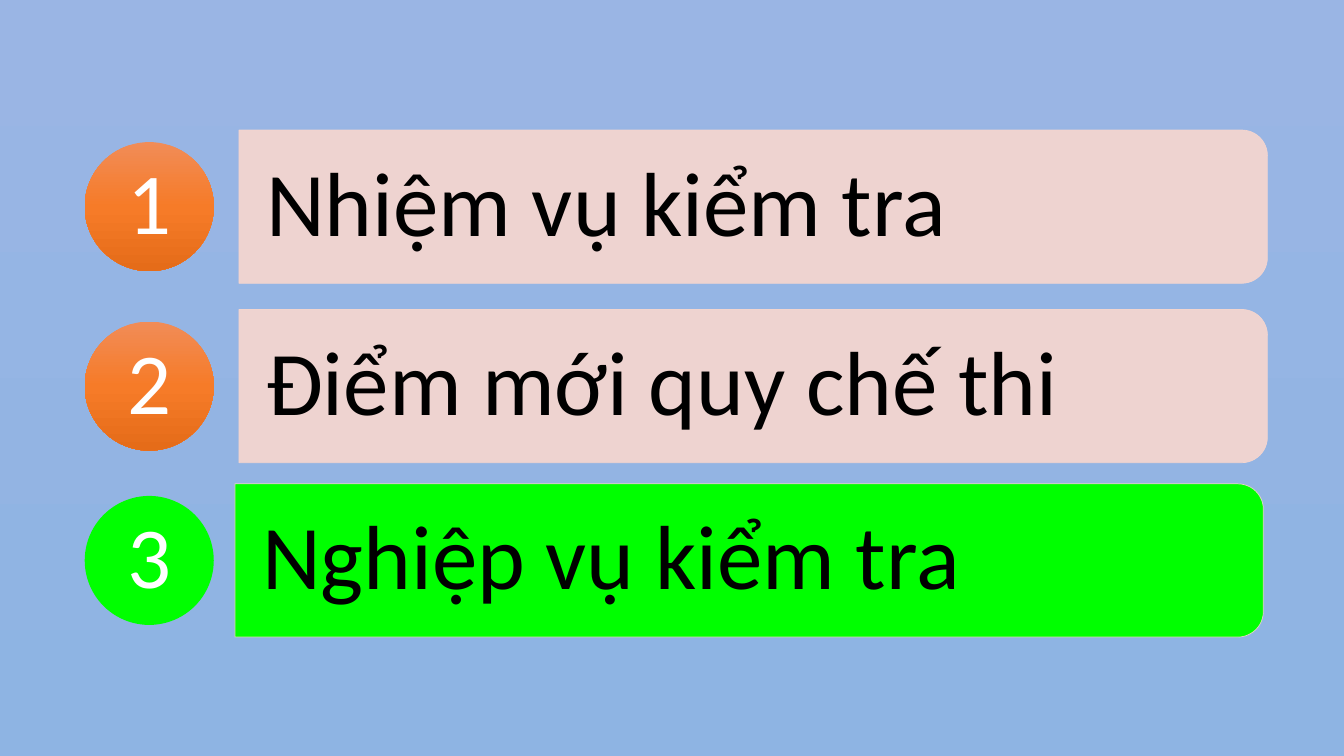
from copy import deepcopy

from lxml.etree import SubElement
from pptx import Presentation
from pptx.dml.color import RGBColor
from pptx.enum.shapes import MSO_SHAPE
from pptx.enum.text import MSO_ANCHOR, PP_ALIGN
from pptx.oxml.ns import qn
from pptx.util import Inches, Pt

THEME = {
    "font": "Calibri",
    "label_size": Pt(65),
    "number_size": Pt(62),
    "label_color": RGBColor.from_string("000000"),
    "number_color": RGBColor.from_string("FFFFFF"),
    "bar": RGBColor.from_string("F8D7CE"),
    "active": RGBColor.from_string("00FF00"),
    "background": ["9AB5E4", "8EB4E3"],
    "circle": ["F18C57", "F67B28", "E56C19"],
}

# Columns and row parts, in inches
CIRCLE_LEFT, CIRCLE_SIZE = 0.84, 1.28
BAR_WIDTH, BAR_HEIGHT = 10.2, 1.52
LABEL_WIDTH, LABEL_HEIGHT = 10.12, 1.37

# Label, bar left, bar top, whether the row is the current topic
ROWS = [
    ("Nhiệm vụ kiểm tra", 2.37, 1.29, False),
    ("Điểm mới quy chế thi", 2.37, 3.07, False),
    ("Nghiệp vụ kiểm tra", 2.33, 4.8, True),
]


def fill_downward(fill, colors):
    """Colour the existing gradient stops evenly from top to bottom."""
    fill.gradient_angle = 270
    for index, (stop, color) in enumerate(zip(fill.gradient_stops, colors)):
        stop.position = index / (len(colors) - 1)
        stop.color.rgb = RGBColor.from_string(color)


def write_text(shape, text, size, color, alignment, margins):
    """Write one centred line; margins are horizontal and vertical inches."""
    frame = shape.text_frame
    frame.text = text
    frame.word_wrap = True
    frame.vertical_anchor = MSO_ANCHOR.MIDDLE
    frame.margin_left = frame.margin_right = Inches(margins[0])
    frame.margin_top = frame.margin_bottom = Inches(margins[1])
    paragraph = frame.paragraphs[0]
    paragraph.alignment = alignment
    paragraph.line_spacing = 0.9
    font = paragraph.runs[0].font
    font.name, font.size = THEME["font"], size
    font.color.rgb = color


presentation = Presentation()
presentation.slide_width = Inches(13.33)
presentation.slide_height = Inches(7.5)
slide = presentation.slides.add_slide(presentation.slide_layouts[6])
slide.background.fill.gradient()
fill_downward(slide.background.fill, THEME["background"])

for number, (label, left, top, is_active) in enumerate(ROWS, start=1):
    # The bar stands upright and is turned so its round corners face right
    turn = (BAR_WIDTH - BAR_HEIGHT) / 2
    bar = slide.shapes.add_shape(
        MSO_SHAPE.ROUND_2_SAME_RECTANGLE,
        Inches(left + turn), Inches(top - turn),
        Inches(BAR_HEIGHT), Inches(BAR_WIDTH))
    bar.rotation = 90
    bar.shadow.inherit = False
    bar.fill.solid()
    bar.fill.fore_color.rgb = THEME["active"] if is_active else THEME["bar"]
    bar.line.color.rgb = THEME["bar"]
    bar.line.width = Pt(0.5)
    for color in bar._element.spPr.iter(qn("a:srgbClr")):
        if color.get("val") == str(THEME["bar"]):
            SubElement(color, qn("a:alpha"), val="90000")

    label_box = slide.shapes.add_textbox(
        Inches(left), Inches(top + (BAR_HEIGHT - LABEL_HEIGHT) / 2),
        Inches(LABEL_WIDTH), Inches(LABEL_HEIGHT))
    write_text(label_box, label, THEME["label_size"], THEME["label_color"],
               PP_ALIGN.LEFT, (0.27, 0.18))

    circle = slide.shapes.add_shape(
        MSO_SHAPE.OVAL,
        Inches(CIRCLE_LEFT), Inches(top + (BAR_HEIGHT - CIRCLE_SIZE) / 2),
        Inches(CIRCLE_SIZE), Inches(CIRCLE_SIZE))
    circle.shadow.inherit = False
    circle.line.fill.background()
    if is_active:
        circle.fill.solid()
        circle.fill.fore_color.rgb = THEME["active"]
    else:
        circle.fill.gradient()
        stops = circle._element.spPr.find(".//" + qn("a:gsLst"))
        stops.append(deepcopy(stops[0]))
        fill_downward(circle.fill, THEME["circle"])
    write_text(circle, str(number), THEME["number_size"],
               THEME["number_color"], PP_ALIGN.CENTER, (0, 0))

presentation.save("out.pptx")
